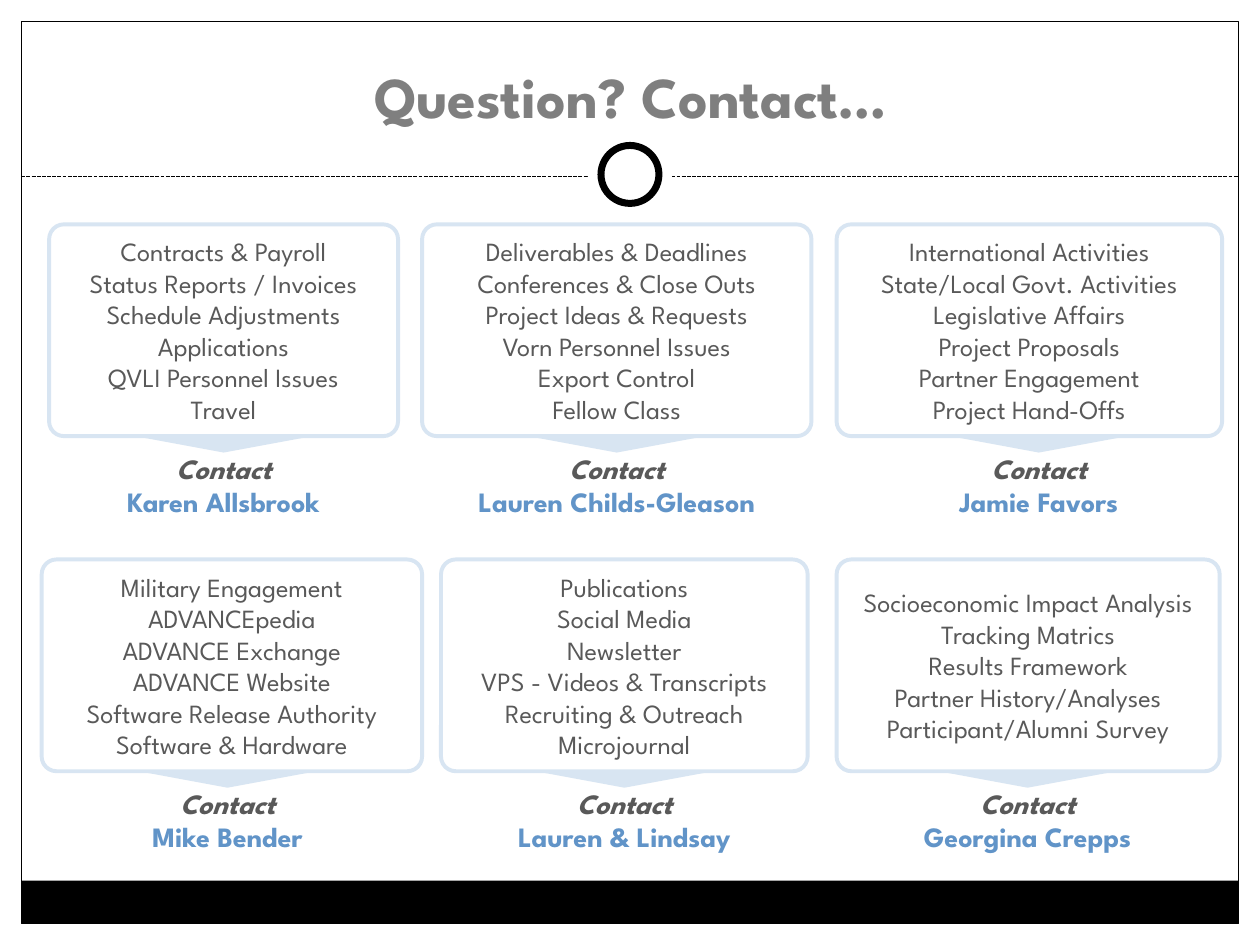
from lxml import etree
from pptx import Presentation
from pptx import util as u
from pptx.dml.color import RGBColor
from pptx.enum import dml, shapes, text
from pptx.oxml.ns import qn

Pt = u.Pt
Preset = shapes.MSO_SHAPE
BLACK = RGBColor(0x00, 0x00, 0x00)
WHITE = RGBColor(0xFF, 0xFF, 0xFF)
TITLE_GREY = RGBColor(0x7F, 0x7F, 0x7F)
TEXT_GREY = RGBColor(0x59, 0x59, 0x59)
NAME_BLUE = RGBColor(0x61, 0x94, 0xC8)
PALE_BLUE = RGBColor(0xD8, 0xE5, 0xF2)
FONT = "League Spartan"
CARD_HEIGHT = 121

ROWS = [
    (128.2, [
        (28.1, 199.4, 127.8, "Karen Allsbrook",
         ["Contracts & Payroll", "Status Reports / Invoices", "Schedule Adjustments",
          "Applications", "QVLI Personnel Issues", "Travel"]),
        (241.2, 222.5, 352.4, "Lauren Childs-Gleason",
         ["Deliverables & Deadlines", "Conferences & Close Outs", "Project Ideas & Requests",
          "Vorn Personnel Issues", "Export Control", "Fellow Class"]),
        (478.1, 220.3, 593.6, "Jamie Favors",
         ["International Activities", "State/Local Govt. Activities", "Legislative Affairs",
          "Project Proposals", "Partner Engagement", "Project Hand-Offs"]),
    ]),
    (319.7, [
        (23.8, 217.4, 130, "Mike Bender",
         ["Military Engagement", "ADVANCEpedia", "ADVANCE Exchange", "ADVANCE Website",
          "Software Release Authority", "Software & Hardware"]),
        (252, 209.5, 356.8, "Lauren & Lindsay",
         ["Publications", "Social Media", "Newsletter", "VPS - Videos & Transcripts",
          "Recruiting & Outreach", "Microjournal"]),
        (478.1, 218.9, 587.2, "Georgina Crepps",
         ["Socioeconomic Impact Analysis", "Tracking Matrics", "Results Framework",
          "Partner History/Analyses", "Participant/Alumni Survey"]),
    ]),
]


def add_shape(page, preset, left, top, width, height, fill=None, line=None, weight=0.75):
    """Add a flat preset shape with an optional fill and outline."""
    shape = page.shapes.add_shape(preset, Pt(left), Pt(top), Pt(width), Pt(height))
    shape.shadow.inherit = False
    if fill is None:
        shape.fill.background()
    else:
        shape.fill.solid()
        shape.fill.fore_color.rgb = fill
    if line is None:
        shape.line.fill.background()
    else:
        shape.line.color.rgb = line
        shape.line.width = Pt(weight)
    return shape


def write_lines(box, lines, size, anchor, wrap=True):
    """Write centred paragraphs given as (text, colour, bold, italic)."""
    frame = box.text_frame
    frame.word_wrap = wrap
    frame.vertical_anchor = anchor
    for index, (words, color, bold, italic) in enumerate(lines):
        para = frame.paragraphs[0] if index == 0 else frame.add_paragraph()
        para.text = words
        para.alignment = text.PP_ALIGN.CENTER
        para.font.name = FONT
        para.font.size = Pt(size)
        para.font.bold = bold
        para.font.italic = italic
        para.font.color.rgb = color


def add_text(page, left, top, width, height, lines, size, anchor, wrap=True):
    """Add a text box holding centred lines."""
    box = page.shapes.add_textbox(Pt(left), Pt(top), Pt(width), Pt(height))
    write_lines(box, lines, size, anchor, wrap)


def add_frame(page, left, top, width, height):
    """Draw the page border, footer band and dashed divider with its ring."""
    band, divider, center = 24.5, top + 88.6, left + width / 2
    add_shape(page, Preset.RECTANGLE, left, top + height - band, width, band, BLACK)
    add_shape(page, Preset.RECTANGLE, left, top, width, height, line=BLACK)
    rule = page.shapes.add_connector(
        shapes.MSO_CONNECTOR.STRAIGHT, Pt(left), Pt(divider), Pt(left + width), Pt(divider))
    rule.line.color.rgb = BLACK
    rule.line.width = Pt(0.75)
    rule.line.dash_style = dml.MSO_LINE.SQUARE_DOT
    etree.SubElement(rule.element.spPr, qn("a:effectLst"))
    for diameter, line in ((48.2, None), (33.1, BLACK)):
        add_shape(page, Preset.OVAL, center - diameter / 2, divider - 1.1 - diameter / 2,
                  diameter, diameter, WHITE, line, 4)


def add_card(page, left, top, width, height, center, name, topics):
    """Draw a topic card with its pointer and the contact below."""
    bottom = top + height
    pointer = add_shape(page, Preset.ISOSCELES_TRIANGLE, center - 50.8, bottom,
                        101.6, 9.4, PALE_BLUE)
    pointer.rotation = 180
    card = add_shape(page, Preset.ROUNDED_RECTANGLE, left, top, width, height,
                     WHITE, PALE_BLUE, 2.25)
    card.adjustments[0] = 0.07
    write_lines(card, [(topic, TEXT_GREY, False, False) for topic in topics],
                15, text.MSO_ANCHOR.MIDDLE)
    contact = [("Contact", TEXT_GREY, True, True), (name, NAME_BLUE, True, False)]
    add_text(page, center - 96, bottom + 5, 192, 46, contact, 16,
             text.MSO_ANCHOR.TOP, wrap=False)


def main():
    """Build the contact slide."""
    deck = Presentation()
    deck.slide_width, deck.slide_height = Pt(720), Pt(540)
    page = deck.slides.add_slide(deck.slide_layouts[6])
    add_frame(page, 12.2, 12.2, 695.6, 515.6)
    add_text(page, 24, 18, 672, 60, [("Question? Contact…", TITLE_GREY, True, False)],
             33, text.MSO_ANCHOR.BOTTOM)
    for top, cards in ROWS:
        for left, width, center, name, topics in cards:
            add_card(page, left, top, width, CARD_HEIGHT, center, name, topics)
    deck.save("out.pptx")


if __name__ == "__main__":
    main()
